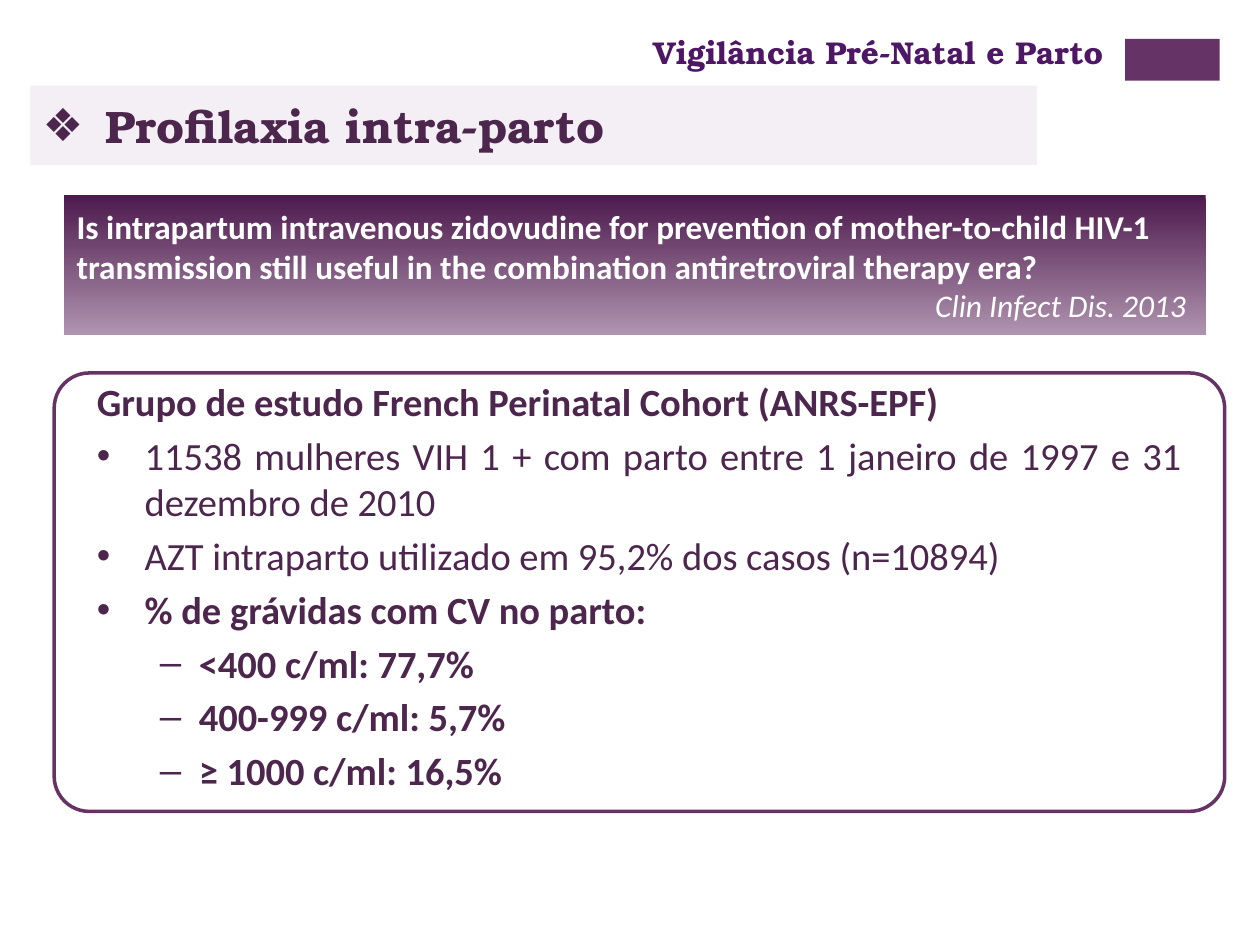
from dataclasses import dataclass

from lxml.etree import SubElement
from pptx import Presentation
from pptx.dml.color import RGBColor
from pptx.enum.shapes import MSO_SHAPE
from pptx.enum.text import MSO_ANCHOR, PP_ALIGN
from pptx.oxml.ns import qn
from pptx.util import Inches, Pt


@dataclass(frozen=True)
class Theme:
    body_font: str = "Calibri"
    head_font: str = "TeX Gyre Bonum"
    plum: str = "663366"
    ink: str = "4D264D"
    violet: str = "4E1765"
    white: str = "FFFFFF"
    band: str = "F3EFF5"
    grad_top: str = "4D1A4D"
    grad_bottom: str = "AF94AF"
    title_size: float = 26
    body_size: float = 22
    question_size: float = 19
    small_size: float = 18


THEME = Theme()


def rgb(value):
    return RGBColor.from_string(value)


def add_box(slide, box, kind=MSO_SHAPE.RECTANGLE, fill=None, line=None):
    sp = slide.shapes.add_shape(kind, *map(Inches, box))
    sp.shadow.inherit = False
    if fill:
        sp.fill.solid()
        sp.fill.fore_color.rgb = rgb(fill)
    if line:
        sp.line.color.rgb = rgb(line)
        sp.line.width = Pt(2)
    else:
        sp.line.fill.background()
    sp.text_frame.vertical_anchor = MSO_ANCHOR.MIDDLE
    return sp


def add_text_box(slide, box):
    tf = slide.shapes.add_textbox(*map(Inches, box)).text_frame
    tf.word_wrap = True
    return tf


def fill_gradient(sp, *colors):
    sp.fill.gradient()
    sp.fill.gradient_angle = 270
    for stop, color in zip(sp.fill.gradient_stops, colors):
        stop.color.rgb = rgb(color)


def set_bullet(p, char, indent, hanging):
    pPr = p._p.get_or_add_pPr()
    pPr.set("marL", str(Inches(indent)))
    pPr.set("indent", str(-Inches(hanging)))
    SubElement(pPr, qn("a:buFont")).set("typeface", "Arial")
    SubElement(pPr, qn("a:buChar")).set("char", char)


def write(tf, text, size=THEME.body_size, font=THEME.body_font, color=THEME.ink,
          bold=False, italic=False, align=PP_ALIGN.LEFT, before=0, level=0, bullet=None):
    p = tf.paragraphs[0] if not tf.text else tf.add_paragraph()
    p.alignment = align
    p.level = level
    p.space_before = Pt(before)
    if bullet:
        set_bullet(p, *bullet)
    r = p.add_run()
    r.text = text
    r.font.size = Pt(size)
    r.font.name = font
    r.font.color.rgb = rgb(color)
    r.font.bold = bold
    r.font.italic = italic


def add_header(slide):
    tf = add_text_box(slide, (2.01, 0.21, 6.93, 0.4))
    write(tf, "Vigilância Pré-Natal e Parto ", size=THEME.small_size,
          font=THEME.head_font, color=THEME.violet, bold=True, align=PP_ALIGN.RIGHT)


def add_title(slide):
    sp = add_box(slide, (0.24, 0.68, 7.99, 0.63), fill=THEME.band)
    write(sp.text_frame, "Profilaxia intra-parto", size=THEME.title_size,
          font=THEME.head_font, bold=True, bullet=("❖", 0.5, 0.5))


def add_question(slide):
    sp = add_box(slide, (0.51, 1.55, 9.06, 1.11))
    fill_gradient(sp, THEME.grad_top, THEME.grad_bottom)
    write(sp.text_frame,
          "Is intrapartum intravenous zidovudine for prevention of mother-to-child HIV-1 "
          "transmission still useful in the combination antiretroviral therapy era?",
          size=THEME.question_size, color=THEME.white, bold=True)
    write(sp.text_frame, "Clin Infect Dis. 2013 ", size=THEME.small_size,
          color=THEME.white, italic=True, align=PP_ALIGN.RIGHT)


def add_findings(slide):
    frame = add_box(slide, (0.43, 2.96, 9.29, 3.48), MSO_SHAPE.ROUNDED_RECTANGLE,
                    fill=THEME.white, line=THEME.plum)
    frame.adjustments[0] = 0.08
    tf = add_text_box(slide, (0.67, 2.95, 8.81, 3.88))
    dot, dash = ("•", 0.38, 0.38), ("–", 0.81, 0.31)
    findings = [
        ("Grupo de estudo French Perinatal Cohort (ANRS-EPF)", True, 0, None),
        ("11538 mulheres VIH 1 + com parto entre 1 janeiro de 1997 e 31 dezembro de 2010",
         False, 0, dot),
        ("AZT intraparto utilizado em 95,2% dos casos (n=10894)", False, 0, dot),
        ("% de grávidas com CV no parto: ", True, 0, dot),
        ("<400 c/ml: 77,7%", True, 1, dash),
        ("400-999 c/ml: 5,7%", True, 1, dash),
        ("≥ 1000 c/ml: 16,5%", True, 1, dash),
    ]
    for text, bold, level, bullet in findings:
        write(tf, text, bold=bold, level=level, bullet=bullet,
              align=PP_ALIGN.JUSTIFY, before=THEME.body_size * 0.2)


def main():
    prs = Presentation()
    prs.slide_width, prs.slide_height = Inches(10), Inches(7.5)
    slide = prs.slides.add_slide(prs.slide_layouts[6])
    add_box(slide, (8.93, 0.31, 0.75, 0.33), fill=THEME.plum)
    add_findings(slide)
    add_question(slide)
    add_title(slide)
    add_header(slide)
    prs.save("out.pptx")


if __name__ == "__main__":
    main()
